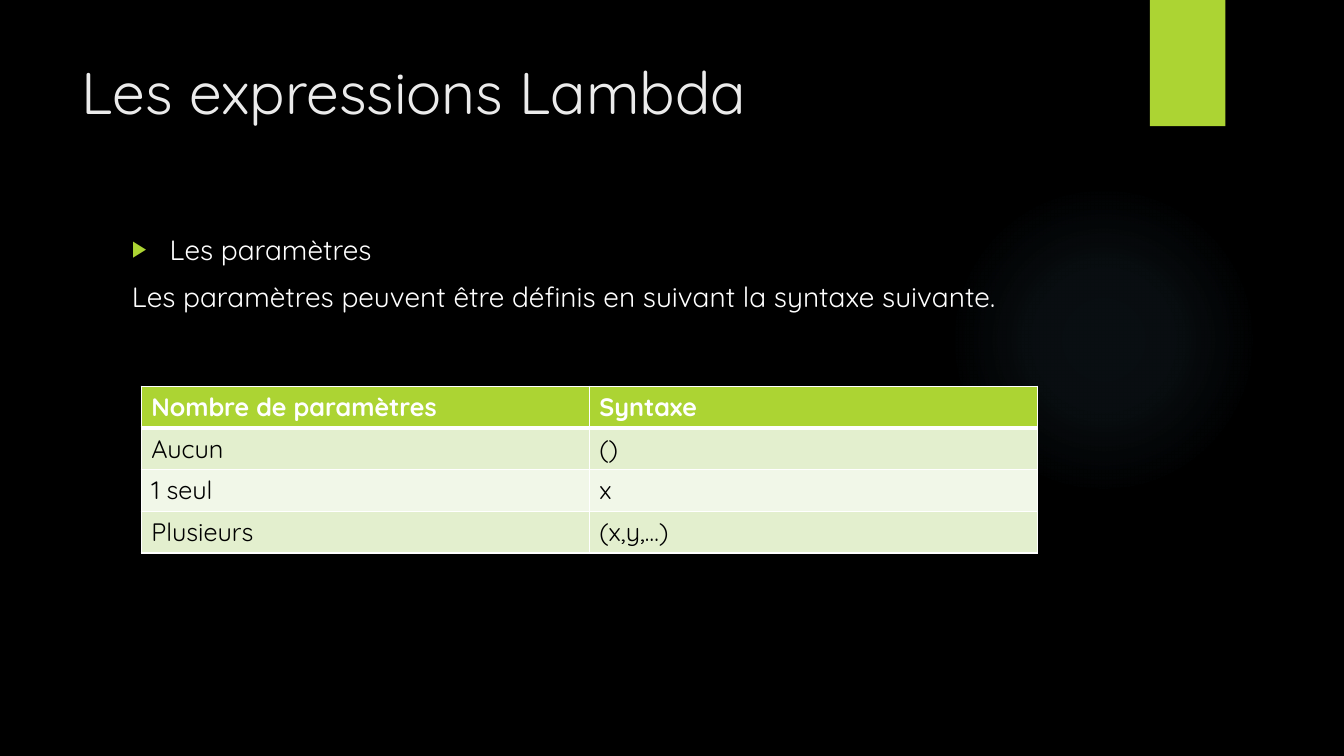
from lxml import etree
from pptx import Presentation
from pptx import util as u
from pptx.dml.color import RGBColor
from pptx.enum import shapes, text
from pptx.oxml.ns import qn


def rgb(value):
    return RGBColor.from_string(value)


def child(parent, tag, **attributes):
    return etree.SubElement(parent, qn(tag), attributes)


def write(paragraph, words, size=20, color="FFFFFF", bold=False, before=0, font="Quicksand"):
    paragraph.alignment = text.PP_ALIGN.LEFT
    paragraph.space_before = u.Pt(before)
    run = paragraph.add_run()
    run.text = words
    run.font.name = font
    run.font.size = u.Pt(size)
    run.font.bold = bold
    run.font.color.rgb = rgb(color)


class LambdaSlide:
    accent = "ACD433"
    bands = ("E3EFCE", "F1F7E8")

    def __init__(self, deck):
        self.slide = deck.slides.add_slide(deck.slide_layouts[1])
        background = self.slide.background.fill
        background.solid()
        background.fore_color.rgb = rgb("000000")

    def decoration(self, preset, *box):
        shape = self.slide.shapes.add_shape(preset, *map(u.Cm, box))
        shape.shadow.inherit = False
        shape.line.fill.background()
        return shape

    def glow(self, *box, color="7AC4F0", stops=((0, 7), (36, 6), (69, 0))):
        halo = self.decoration(shapes.MSO_SHAPE.OVAL, *box)
        halo.fill.gradient()
        gradient = halo.fill._fill._gradFill
        for part in list(gradient):
            gradient.remove(part)
        stop_list = child(gradient, "a:gsLst")
        for position, opacity in stops:
            stop = child(stop_list, "a:gs", pos=str(position * 1000))
            tint = child(stop, "a:srgbClr", val=color)
            child(tint, "a:alpha", val=str(opacity * 1000))
        circle = child(gradient, "a:path", path="circle")
        child(circle, "a:fillToRect", l="50000", t="50000", r="50000", b="50000")

    def ribbon(self, *box):
        ribbon = self.decoration(shapes.MSO_SHAPE.RECTANGLE, *box)
        ribbon.fill.solid()
        ribbon.fill.fore_color.rgb = rgb(self.accent)

    def place(self, holder, *box):
        holder.left, holder.top, holder.width, holder.height = map(u.Cm, box)
        self.slide.shapes._spTree.append(holder._element)
        frame = holder.text_frame
        frame.word_wrap = True
        frame.auto_size = text.MSO_AUTO_SIZE.NONE
        frame.vertical_anchor = text.MSO_ANCHOR.TOP
        return frame

    def title(self, words, *box):
        frame = self.place(self.slide.shapes.title, *box)
        write(frame.paragraphs[0], words, size=42, color="EBEBEB")

    def body(self, topic, explanation, *box):
        frame = self.place(self.slide.placeholders[1], *box)
        heading, detail = frame.paragraphs[0], frame.add_paragraph()
        indent = u.Cm(0.95)
        marker = heading._p.get_or_add_pPr()
        marker.set("marL", str(indent))
        marker.set("indent", str(-indent))
        child(child(marker, "a:buClr"), "a:srgbClr", val=self.accent)
        child(marker, "a:buSzPct", val="80000")
        child(marker, "a:buChar", char="▶")
        plain = detail._p.get_or_add_pPr()
        plain.set("marL", "0")
        plain.set("indent", "0")
        child(plain, "a:buNone")
        write(heading, topic)
        write(detail, explanation, before=10)

    def borders(self, cell, bottom):
        properties = cell._tc.get_or_add_tcPr()
        for side, width in (("L", 1), ("R", 1), ("T", 1), ("B", bottom)):
            edge = child(properties, f"a:ln{side}", w=str(u.Pt(width)))
            child(child(edge, "a:solidFill"), "a:srgbClr", val="FFFFFF")

    def table(self, rows, left, top, width, row_height):
        grid = self.slide.shapes.add_table(
            len(rows), len(rows[0]), u.Cm(left), u.Cm(top),
            u.Cm(width), u.Cm(row_height * len(rows))).table
        for row, values in enumerate(rows):
            header = row == 0
            for column, value in enumerate(values):
                cell = grid.cell(row, column)
                self.borders(cell, 3 if header else 1)
                cell.fill.solid()
                cell.fill.fore_color.rgb = rgb(self.accent if header else self.bands[(row - 1) % 2])
                write(cell.text_frame.paragraphs[0], value, size=18,
                      color="FFFFFF" if header else "000000", bold=header)


def main():
    deck = Presentation()
    deck.slide_width, deck.slide_height = u.Cm(33.87), u.Cm(19.05)
    page = LambdaSlide(deck)
    page.glow(23.9, 4.65, 7.82, 7.82)
    page.ribbon(28.98, 0, 1.9, 3.18)
    page.title("Les expressions Lambda", 1.8, 1.27, 26.14, 3.89)
    page.body("Les paramètres",
              "Les paramètres peuvent être définis en suivant la syntaxe suivante.",
              3.07, 5.72, 24.84, 11.66)
    syntax = [("Nombre de paramètres", "Syntaxe"), ("Aucun", "()"),
              ("1 seul", "x"), ("Plusieurs", "(x,y,…)")]
    page.table(syntax, 3.56, 9.73, 22.58, 1.03)
    deck.save("out.pptx")


if __name__ == "__main__":
    main()
